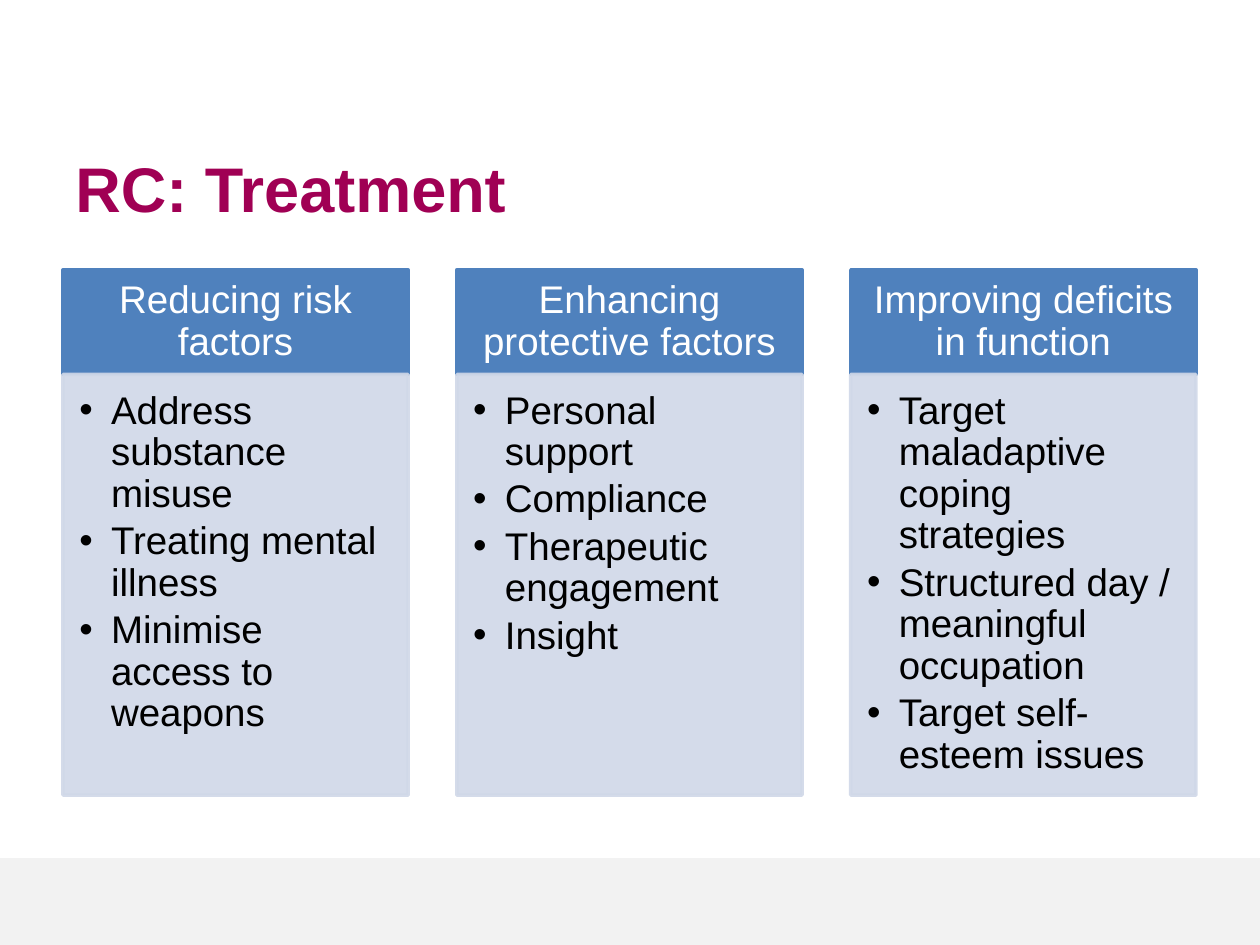
from dataclasses import dataclass

from lxml import etree
from pptx import Presentation
from pptx import util as u
from pptx.dml.color import RGBColor
from pptx.enum import shapes, text
from pptx.oxml.ns import qn


@dataclass(frozen=True)
class Theme:
    font: str = "Arial"
    title: str = "A00054"
    header: str = "4F81BD"
    panel: str = "D0D8E8"
    footer: str = "F2F2F2"
    light: str = "FFFFFF"
    dark: str = "000000"
    title_size: int = 36
    body_size: int = 22


COLUMNS = [
    ("Reducing risk factors",
     ["Address substance misuse", "Treating mental illness",
      "Minimise access to weapons"]),
    ("Enhancing protective factors",
     ["Personal support", "Compliance", "Therapeutic engagement", "Insight"]),
    ("Improving deficits in function",
     ["Target maladaptive coping strategies",
      "Structured day / meaningful occupation", "Target self-esteem issues"]),
]
LEFT, TOP = 1.27, 5.44
COLUMN_WIDTH, COLUMN_PITCH = 6.96, 7.94
HEADER_HEIGHT, PANEL_HEIGHT = 2.11, 8.48


class SlideBuilder:
    def __init__(self, slide, theme):
        self.slide = slide
        self.theme = theme

    def rectangle(self, box, color, outlined=True, opacity=100):
        sp = self.slide.shapes.add_shape(
            shapes.MSO_SHAPE.RECTANGLE, *map(u.Cm, box))
        sp.shadow.inherit = False
        sp.fill.solid()
        sp.fill.fore_color.rgb = RGBColor.from_string(color)
        if outlined:
            sp.line.color.rgb = RGBColor.from_string(color)
            sp.line.width = u.Pt(2)
        else:
            sp.line.fill.background()
        if opacity < 100:
            for clr in sp._element.spPr.iter(qn("a:srgbClr")):
                etree.SubElement(clr, qn("a:alpha"), val=str(opacity * 1000))
        return sp

    def frame(self, sp, anchor, margins):
        """Set wrapping, anchor and left, top, right, bottom margins."""
        tf = sp.text_frame
        tf.word_wrap = True
        tf.vertical_anchor = anchor
        (tf.margin_left, tf.margin_top,
         tf.margin_right, tf.margin_bottom) = map(u.Cm, margins)
        return tf

    def set_text(self, p, words, size, color, align, bold=False):
        p.text = words
        p.alignment = align
        for r in p.runs:
            r.font.name = self.theme.font
            r.font.size = u.Pt(size)
            r.font.bold = bold
            r.font.color.rgb = RGBColor.from_string(color)

    def title(self, box, words):
        sp = self.slide.shapes.add_textbox(*map(u.Cm, box))
        tf = self.frame(sp, text.MSO_ANCHOR.MIDDLE, (0.25, 0.13, 0.25, 0.13))
        self.set_text(tf.paragraphs[0], words, self.theme.title_size,
                      self.theme.title, text.PP_ALIGN.LEFT, bold=True)

    def header(self, box, words):
        sp = self.rectangle(box, self.theme.header)
        tf = self.frame(sp, text.MSO_ANCHOR.MIDDLE, (0.43, 0.25, 0.43, 0.25))
        p = tf.paragraphs[0]
        p.line_spacing = 0.9
        self.set_text(p, words, self.theme.body_size, self.theme.light,
                      text.PP_ALIGN.CENTER)

    def bullet_panel(self, box, items):
        sp = self.rectangle(box, self.theme.panel, opacity=90)
        tf = self.frame(sp, text.MSO_ANCHOR.TOP, (0.33, 0.33, 0.43, 0.48))
        for i, item in enumerate(items):
            p = tf.add_paragraph() if i else tf.paragraphs[0]
            p.line_spacing = 0.9
            p.space_after = u.Pt(0.15 * self.theme.body_size)
            self.bullet(p)
            self.set_text(p, item, self.theme.body_size, self.theme.dark,
                          text.PP_ALIGN.LEFT)

    def bullet(self, p, indent=0.64):
        pPr = p._p.get_or_add_pPr()
        pPr.set("marL", str(u.Cm(indent)))
        pPr.set("indent", str(-u.Cm(indent)))
        etree.SubElement(pPr, qn("a:buFont"), typeface=self.theme.font)
        etree.SubElement(pPr, qn("a:buChar"), char="•")


def main():
    prs = Presentation()
    prs.slide_width, prs.slide_height = u.Cm(25.4), u.Cm(19.05)
    theme = Theme()
    s = SlideBuilder(prs.slides.add_slide(prs.slide_layouts[6]), theme)

    s.rectangle((0, 17.3, 25.4, 1.75), theme.footer, outlined=False)
    s.title((LEFT, 2.84, 21.59, 1.88), "RC: Treatment")
    for i, (heading, items) in enumerate(COLUMNS):
        x = LEFT + i * COLUMN_PITCH
        s.header((x, TOP, COLUMN_WIDTH, HEADER_HEIGHT), heading)
        s.bullet_panel(
            (x, TOP + HEADER_HEIGHT, COLUMN_WIDTH, PANEL_HEIGHT), items)

    prs.save("out.pptx")


if __name__ == "__main__":
    main()
